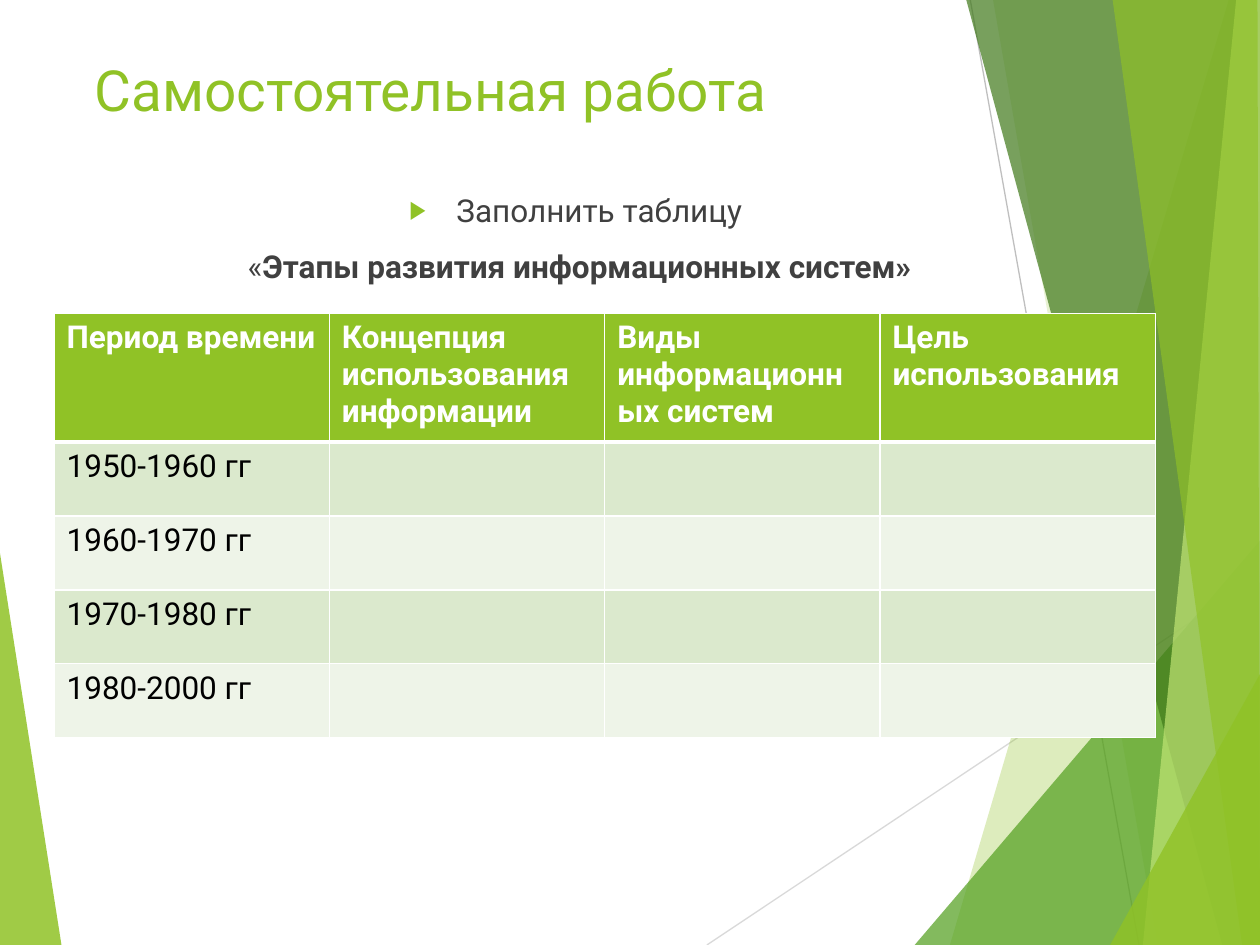
from dataclasses import dataclass

from pptx import Presentation
from pptx.dml.color import RGBColor as Rgb
from pptx.enum.text import MSO_ANCHOR as Anchor, MSO_AUTO_SIZE as AutoSize, PP_ALIGN as Align
from pptx.enum.shapes import MSO_CONNECTOR as Connector
from pptx.oxml import parse_xml
from pptx.oxml.ns import nsdecls, qn
from pptx.util import Cm, Pt

Point = tuple[float, float]
WIDTH, HEIGHT = 25.4, 19.05


@dataclass(frozen=True)
class Theme:
    font: str = "Roboto"
    title_size: float = 32.4
    text_size: float = 18
    accent: str = "90C226"
    green: str = "54A021"
    dark_green: str = "3F7819"
    lime: str = "C0E474"
    text: str = "404040"
    black: str = "000000"
    white: str = "FFFFFF"
    bands: tuple[str, str] = ("DBE9CD", "EEF4E8")


@dataclass(frozen=True)
class Facet:
    color: str
    opacity: int
    points: tuple[Point, ...]


@dataclass(frozen=True)
class Ray:
    start: Point
    end: Point
    color: str


THEME = Theme()
LEFT_FACET = Facet(THEME.accent, 85, ((0, 11.15), (1.24, HEIGHT), (0, HEIGHT)))
RAYS = (
    Ray((14.25, HEIGHT), (WIDTH, 11.61), "D9D9D9"),
    Ray((19.56, 0), (22.96, HEIGHT), "BFBFBF"),
)
CORNER, TOP_CORNER = (WIDTH, HEIGHT), (WIDTH, 0)
RIGHT_FACETS = (
    Facet(THEME.accent, 30, ((24.77, 0), (19.15, HEIGHT), CORNER, TOP_CORNER)),
    Facet(THEME.accent, 20, ((20.02, 0), (23.34, HEIGHT), CORNER, TOP_CORNER)),
    Facet(THEME.green, 72, ((18.44, HEIGHT), (WIDTH, 10.9), CORNER)),
    Facet(THEME.dark_green, 70, ((19.48, 0), (24.64, HEIGHT), CORNER, TOP_CORNER)),
    Facet(THEME.lime, 70, ((24.92, 0), (23.04, HEIGHT), CORNER, TOP_CORNER)),
    Facet(THEME.accent, 65, ((22.43, 0), (25.04, HEIGHT), CORNER, (25.35, 0))),
    Facet(THEME.accent, 80, ((22.38, HEIGHT), (WIDTH, 13.59), CORNER)),
)
HEADERS = (
    "Период времени",
    "Концепция использования информации",
    "Виды информационных систем",
    "Цель использования",
)
PERIODS = ("1950-1960 гг", "1960-1970 гг", "1970-1980 гг", "1980-2000 гг")


def write(paragraph, text: str, *, color: str, size: float = THEME.text_size,
          bold: bool = False, align: Align = Align.LEFT, before: float = 0) -> None:
    paragraph.alignment = align
    paragraph.space_before = Pt(before)
    run = paragraph.add_run()
    run.text = text
    run.font.name = THEME.font
    run.font.size = Pt(size)
    run.font.bold = bold
    run.font.color.rgb = Rgb.from_string(color)


def draw_facet(slide, facet: Facet) -> None:
    start, *others = [(Cm(x), Cm(y)) for x, y in facet.points]
    builder = slide.shapes.build_freeform(*start)
    builder.add_line_segments(others, close=True)
    shape = builder.convert_to_shape()
    shape.shadow.inherit = False
    shape.line.fill.background()
    shape.fill.solid()
    shape.fill.fore_color.rgb = Rgb.from_string(facet.color)
    color = shape._element.spPr.find(qn("a:solidFill"))[0]
    color.append(parse_xml(f'<a:alpha {nsdecls("a")} val="{facet.opacity * 1000}"/>'))


def draw_ray(slide, ray: Ray) -> None:
    ends = [Cm(value) for value in ray.start + ray.end]
    connector = slide.shapes.add_connector(Connector.STRAIGHT, *ends)
    connector.line.color.rgb = Rgb.from_string(ray.color)
    connector.line.width = Pt(0.75)
    connector._element.spPr.append(parse_xml(f'<a:effectLst {nsdecls("a")}/>'))


def place(shape, left: float, top: float, width: float, height: float, anchor: Anchor):
    """Bring a placeholder to the front, position it and return its text frame."""
    shape._element.getparent().append(shape._element)
    shape.left, shape.top = Cm(left), Cm(top)
    shape.width, shape.height = Cm(width), Cm(height)
    frame = shape.text_frame
    frame.word_wrap = True
    frame.auto_size = AutoSize.NONE
    frame.vertical_anchor = anchor
    return frame


def set_bullet(paragraph, indent: float, *bullet: str) -> None:
    properties = paragraph._p.get_or_add_pPr()
    properties.set("marL", str(Cm(indent)))
    properties.set("indent", str(-Cm(indent)))
    for element in bullet:
        properties.append(parse_xml(element))


def set_borders(cell, *, top: float = 1, bottom: float = 1) -> None:
    properties = cell._tc.get_or_add_tcPr()
    for side, width in {"L": 1, "R": 1, "T": top, "B": bottom}.items():
        properties.append(parse_xml(
            f'<a:ln{side} {nsdecls("a")} w="{Pt(width)}"><a:solidFill>'
            f'<a:srgbClr val="{THEME.white}"/></a:solidFill></a:ln{side}>'))


def fill_cell(cell, color: str) -> None:
    cell.fill.solid()
    cell.fill.fore_color.rgb = Rgb.from_string(color)


def draw_table(slide) -> None:
    header_height, row_height, column_width = 2.59, 1.49, 5.55
    table = slide.shapes.add_table(
        len(PERIODS) + 1, len(HEADERS), Cm(1.09), Cm(6.32),
        Cm(column_width * len(HEADERS)),
        Cm(header_height + row_height * len(PERIODS))).table
    for row_index, row in enumerate(table.rows):
        row.height = Cm(row_height if row_index else header_height)
    for column, header in enumerate(HEADERS):
        table.columns[column].width = Cm(column_width)
        cell = table.cell(0, column)
        set_borders(cell, bottom=3)
        fill_cell(cell, THEME.accent)
        write(cell.text_frame.paragraphs[0], header, color=THEME.white, bold=True)
        for row_index in range(1, len(PERIODS) + 1):
            cell = table.cell(row_index, column)
            set_borders(cell, top=3 if row_index == 1 else 1)
            fill_cell(cell, THEME.bands[(row_index - 1) % 2])
    for row_index, period in enumerate(PERIODS, start=1):
        paragraph = table.cell(row_index, 0).text_frame.paragraphs[0]
        write(paragraph, period, color=THEME.black)


def main() -> None:
    presentation = Presentation()
    presentation.slide_width, presentation.slide_height = Cm(WIDTH), Cm(HEIGHT)
    slide = presentation.slides.add_slide(presentation.slide_layouts[1])

    draw_facet(slide, LEFT_FACET)
    for ray in RAYS:
        draw_ray(slide, ray)
    for facet in RIGHT_FACETS:
        draw_facet(slide, facet)

    title = place(slide.shapes.title, 1.65, 0.91, 17.63, 1.7, Anchor.BOTTOM)
    write(title.paragraphs[0], "Самостоятельная работа",
          color=THEME.accent, size=THEME.title_size)

    body = place(slide.placeholders[1], 1.65, 3.73, 20.07, 10.77, Anchor.TOP)
    task, subject = body.paragraphs[0], body.add_paragraph()
    namespace = nsdecls("a")
    set_bullet(task, 0.95,
               f'<a:buClr {namespace}><a:srgbClr val="{THEME.accent}"/></a:buClr>',
               f'<a:buSzPct {namespace} val="80000"/>',
               f'<a:buChar {namespace} char="▶"/>')
    write(task, "Заполнить таблицу ", color=THEME.text, align=Align.CENTER)
    set_bullet(subject, 0, f'<a:buNone {namespace}/>')
    write(subject, "«", color=THEME.text, align=Align.CENTER, before=10)
    write(subject, "Этапы развития информационных систем»", color=THEME.text,
          bold=True, align=Align.CENTER, before=10)

    draw_table(slide)
    presentation.save("out.pptx")


if __name__ == "__main__":
    main()
